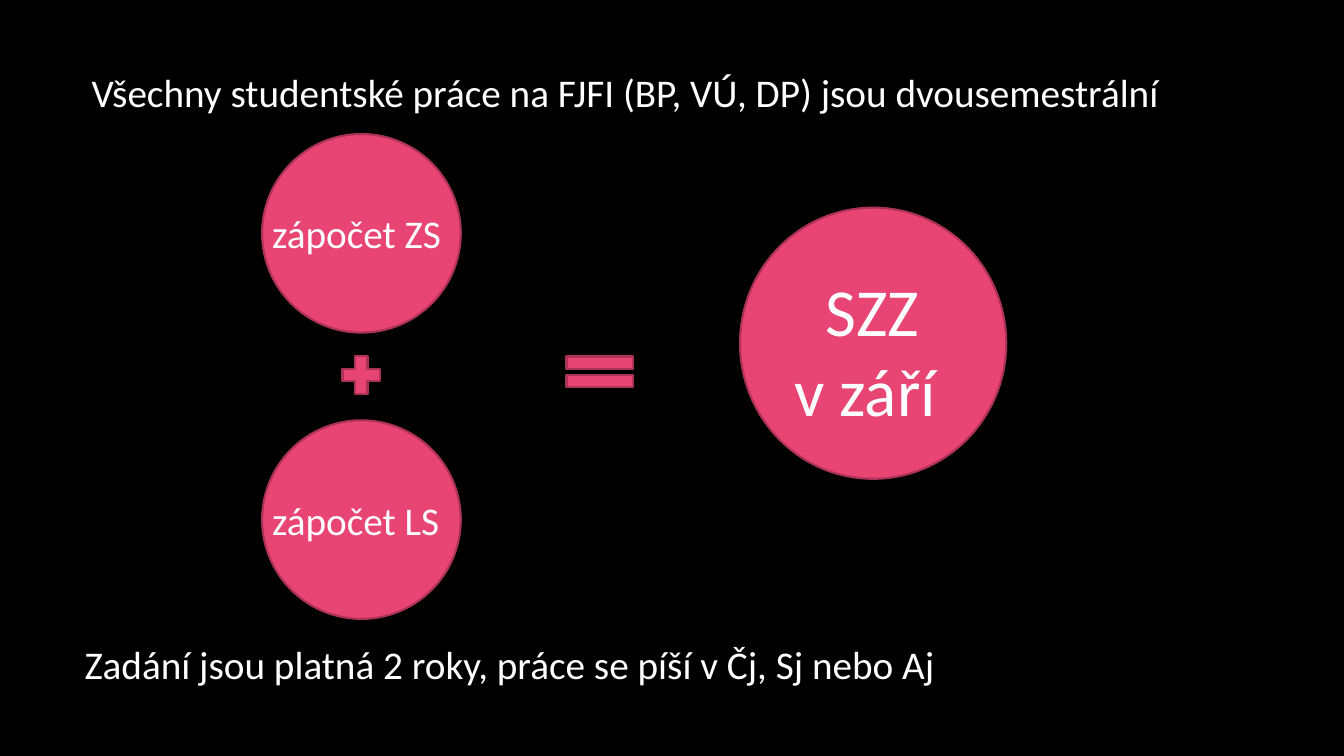
from typing import NamedTuple

from pptx import Presentation
from pptx.dml.color import RGBColor
from pptx.enum.shapes import MSO_SHAPE as Preset
from pptx.enum.text import MSO_ANCHOR as Anchor, PP_ALIGN as Align
from pptx.util import Inches, Pt

COLORS = {"background": "000000", "fill": "E84574", "outline": "AC3356", "text": "FFFFFF"}


class Box(NamedTuple):
    left: float
    top: float
    width: float
    height: float


class Symbol(NamedTuple):
    preset: Preset
    box: Box


class Label(NamedTuple):
    lines: list[str]
    box: Box
    size: int = 28
    align: Align = Align.LEFT


def color(name: str) -> RGBColor:
    return RGBColor.from_string(COLORS[name])


def inches(box: Box) -> list[Inches]:
    return [Inches(length) for length in box]


def draw_symbol(slide, symbol: Symbol) -> None:
    shape = slide.shapes.add_shape(symbol.preset, *inches(symbol.box))
    shape.shadow.inherit = False
    shape.fill.solid()
    shape.fill.fore_color.rgb = color("fill")
    shape.line.color.rgb = color("outline")
    shape.line.width = Pt(1.5)


def write_label(shape, label: Label) -> None:
    frame = shape.text_frame
    frame.word_wrap = True
    frame.vertical_anchor = Anchor.TOP
    frame.text = "\n".join(label.lines)
    font_format = {"name": "Calibri", "size": Pt(label.size)}
    for paragraph in frame.paragraphs:
        paragraph.alignment = label.align
        for run in paragraph.runs:
            for attribute, value in font_format.items():
                setattr(run.font, attribute, value)
            run.font.color.rgb = color("text")


def place_title(slide, label: Label) -> None:
    title = slide.shapes.title
    for attribute, value in zip(Box._fields, inches(label.box)):
        setattr(title, attribute, value)
    write_label(title, label)


def draw_label(slide, label: Label) -> None:
    write_label(slide.shapes.add_textbox(*inches(label.box)), label)


# Credits stacked in the left column
CREDIT_LEFT, CREDIT_SIZE, LABEL_DROP, LINE_HEIGHT = 2.6, 1.97, 0.7, 0.57
CREDITS = {"zápočet ZS": 1.33, "zápočet LS": 4.17}

HEADING = Label(["Všechny studentské práce na FJFI (BP, VÚ, DP) jsou dvousemestrální"],
                Box(0.81, 0.63, 11.18, LINE_HEIGHT))
SYMBOLS = [
    *(Symbol(Preset.OVAL, Box(CREDIT_LEFT, top, CREDIT_SIZE, CREDIT_SIZE))
      for top in CREDITS.values()),
    Symbol(Preset.OVAL, Box(7.34, 2.06, 2.64, 2.69)),
    Symbol(Preset.MATH_PLUS, Box(3.33, 3.46, 0.51, 0.52)),
    Symbol(Preset.MATH_EQUAL, Box(5.5, 3.43, 0.9, 0.52)),
]
LABELS = [
    *(Label([credit], Box(CREDIT_LEFT, top + LABEL_DROP, CREDIT_SIZE, LINE_HEIGHT))
      for credit, top in CREDITS.items()),
    Label(["SZZ", "v září "], Box(7.67, 2.62, 1.97, 1.72), 48, Align.CENTER),
    Label(["Zadání jsou platná 2 roky, práce se píší v Čj, Sj nebo Aj"],
          Box(0.74, 6.3, 11.18, LINE_HEIGHT)),
]


def main() -> None:
    deck = Presentation()
    deck.slide_width, deck.slide_height = Inches(13.33), Inches(7.5)
    slide = deck.slides.add_slide(deck.slide_layouts[5])
    slide.background.fill.solid()
    slide.background.fill.fore_color.rgb = color("background")

    # Heading, then the equation, then its wording and the closing line
    place_title(slide, HEADING)
    for symbol in SYMBOLS:
        draw_symbol(slide, symbol)
    for label in LABELS:
        draw_label(slide, label)
    deck.save("out.pptx")


if __name__ == "__main__":
    main()
